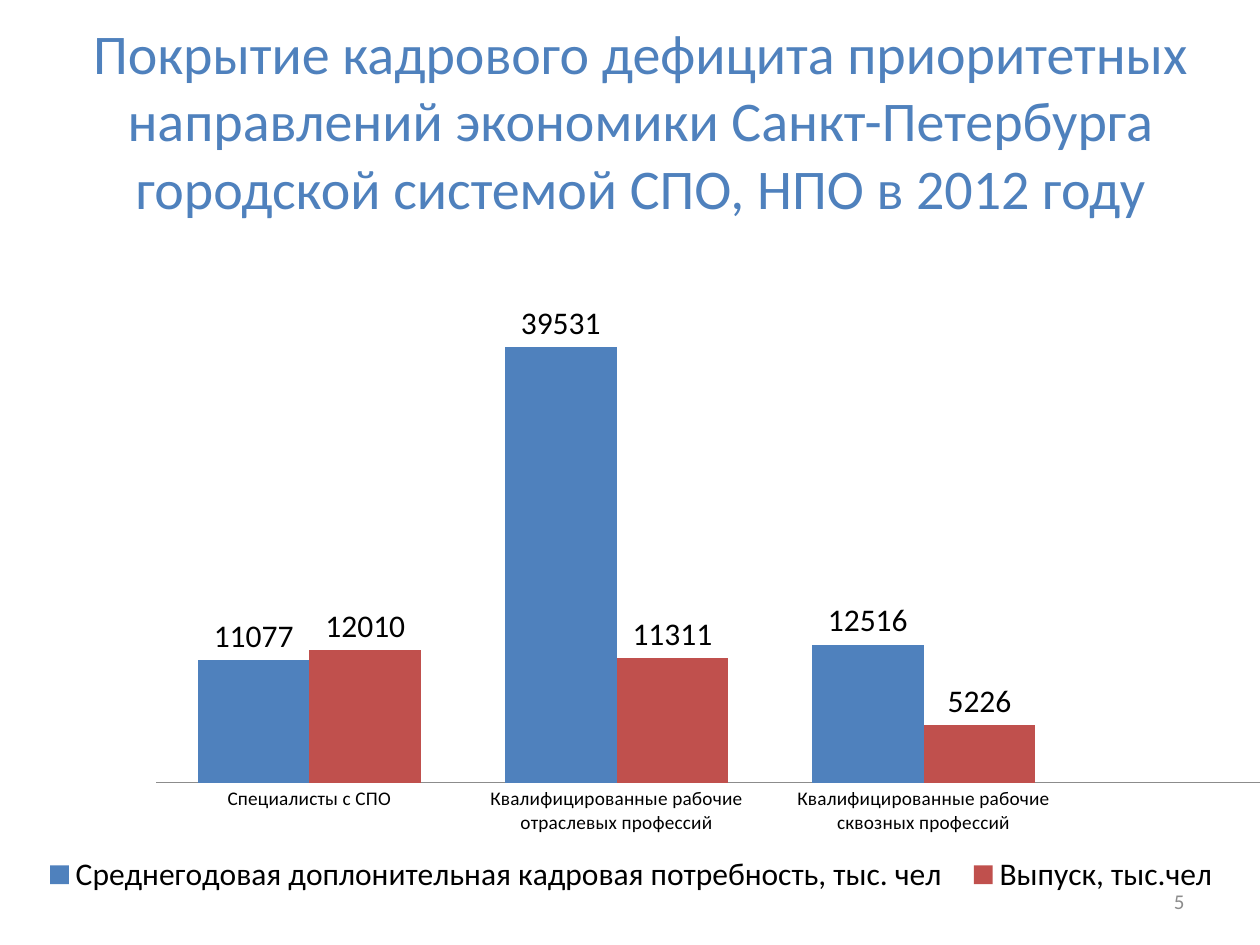
from pptx import Presentation
from pptx import util as u
from pptx.chart.data import CategoryChartData
from pptx.dml.color import RGBColor
from pptx.enum import chart as ch, text
from pptx.oxml import parse_xml
from pptx.oxml.ns import nsdecls

PX = 914400 / 126
BLUE = RGBColor(0x4F, 0x81, 0xBD)
RED = RGBColor(0xC0, 0x50, 0x4D)
GREY = RGBColor(0x8C, 0x8C, 0x8C)
BLACK = RGBColor(0, 0, 0)

TITLE = ("Покрытие кадрового дефицита приоритетных направлений экономики "
         "Санкт-Петербурга\vгородской системой СПО, НПО в 2012 году")
# The last, empty group leaves room on the right
GROUPS = ["Специалисты с СПО",
          "Квалифицированные рабочие отраслевых профессий",
          "Квалифицированные рабочие сквозных профессий",
          ""]
SERIES = [
    ("Среднегодовая доплонительная кадровая потребность, тыс. чел",
     [11077, 39531, 12516, None], BLUE),
    ("Выпуск, тыс.чел", [11311 + 699, 11311, 5226, None], RED),
]


def px(*vals):
    return [u.Emu(round(v * PX)) for v in vals]


def put(obj, vals):
    for key, val in vals.items():
        setattr(obj, key, val)


def style(font, size, color):
    put(font, {"name": "Calibri", "size": u.Pt(size), "bold": False})
    font.color.rgb = color


def add_text(slide, box, words, size, color, align):
    frame = slide.shapes.add_textbox(*px(*box)).text_frame
    put(frame, {"word_wrap": True, "vertical_anchor": text.MSO_ANCHOR.MIDDLE,
                "text": words})
    para = frame.paragraphs[0]
    para.alignment = align
    for run in para.runs:
        style(run.font, size, color)


def layout(x, y, w, h, inner=False):
    """Manual chart layout, as shares of the chart frame."""
    target = '<c:layoutTarget val="inner"/>' if inner else ""
    return parse_xml(
        f'<c:layout {nsdecls("c")}><c:manualLayout>{target}'
        '<c:xMode val="edge"/><c:yMode val="edge"/>'
        f'<c:x val="{x}"/><c:y val="{y}"/><c:w val="{w}"/><c:h val="{h}"/>'
        '</c:manualLayout></c:layout>')


def add_bars(slide, box):
    data = CategoryChartData()
    data.categories = GROUPS
    for name, vals, _ in SERIES:
        data.add_series(name, vals)
    chart = slide.shapes.add_chart(
        ch.XL_CHART_TYPE.COLUMN_CLUSTERED, *px(*box), data).chart
    put(chart, {"has_title": False, "has_legend": True})
    style(chart.font, 18, BLACK)

    # Columns and their values
    plot = chart.plots[0]
    put(plot, {"gap_width": 75, "overlap": 0, "vary_by_categories": False})
    for series, (_, _, color) in zip(plot.series, SERIES):
        series.format.fill.solid()
        series.format.fill.fore_color.rgb = color
        put(series.data_labels, {
            "show_value": True,
            "position": ch.XL_LABEL_POSITION.OUTSIDE_END})

    # Axes
    put(chart.value_axis, {"visible": False, "has_major_gridlines": False,
                           "minimum_scale": 0, "maximum_scale": 45000})
    axis = chart.category_axis
    axis.major_tick_mark = ch.XL_TICK_MARK.NONE
    style(axis.tick_labels.font, 11, BLACK)
    axis.format.line.color.rgb = GREY
    axis.format.line.width = u.Pt(0.75)

    # Legend and plot places
    put(chart.legend, {"position": ch.XL_LEGEND_POSITION.BOTTOM,
                       "include_in_layout": False})
    area = chart.element.xpath("c:chart/c:plotArea")[0]
    for old in area.xpath("c:layout"):
        area.remove(old)
    area.insert(0, layout(0.103, 0.048, 0.897, 0.748, inner=True))
    legend = chart.element.xpath("c:chart/c:legend")[0]
    for old in legend.xpath("c:layout"):
        legend.remove(old)
    legend.xpath("c:legendPos")[0].addnext(layout(0.01, 0.9, 0.88, 0.07))


def main():
    deck = Presentation()
    deck.slide_width, deck.slide_height = px(1260, 945)
    slide = deck.slides.add_slide(deck.slide_layouts[6])
    add_bars(slide, (15, 255, 1370, 663))
    add_text(slide, (74, 55, 1134, 129), TITLE, 32, BLUE, text.PP_ALIGN.CENTER)
    # Page number
    add_text(slide, (903, 876, 294, 50), "5", 12, GREY, text.PP_ALIGN.RIGHT)
    deck.save("out.pptx")


if __name__ == "__main__":
    main()
